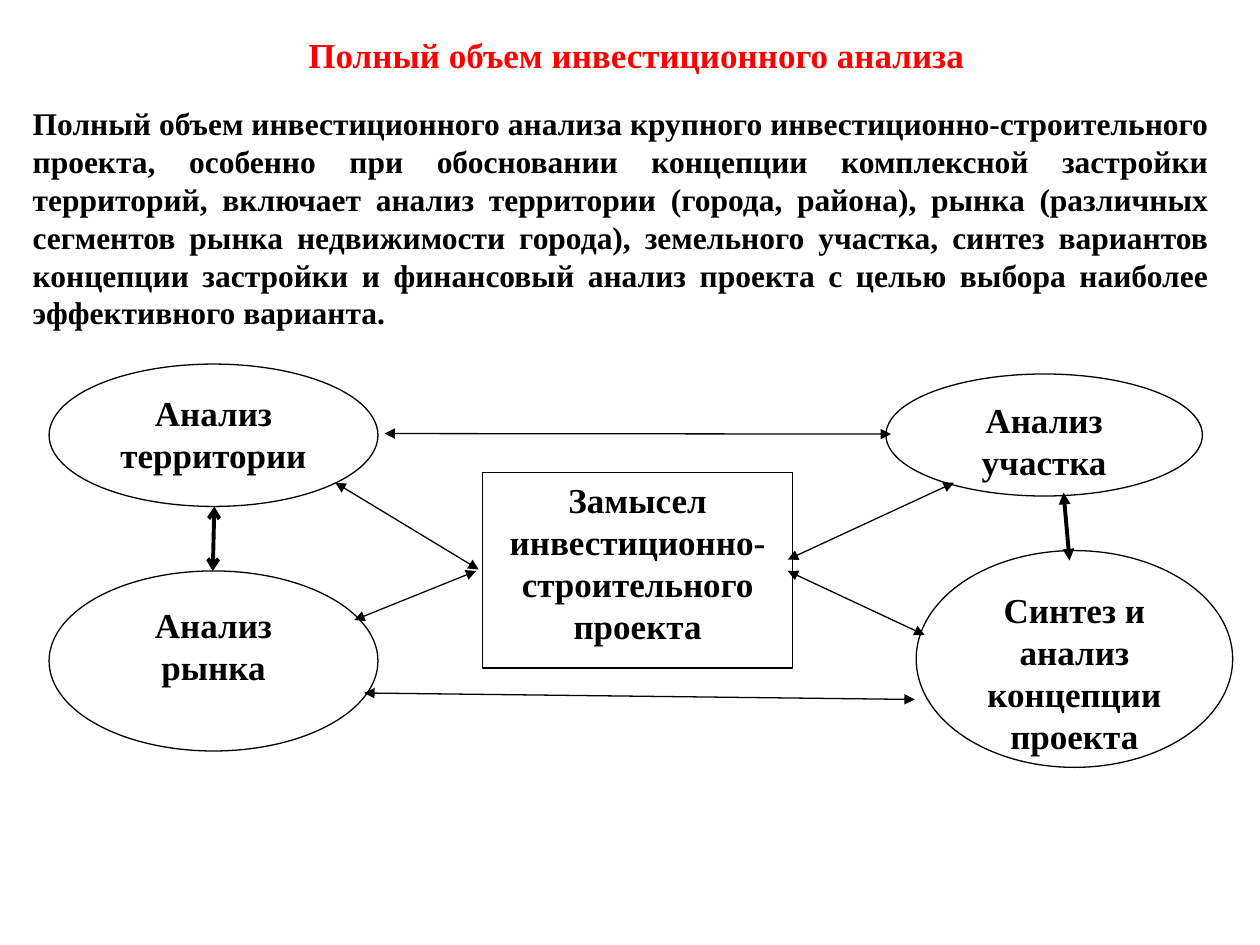
import pptx
import pptx.util
import pptx.dml.color
import pptx.enum.shapes
import pptx.enum.text
import pptx.oxml.ns
from lxml import etree

Cm, Pt = pptx.util.Cm, pptx.util.Pt
RGB = pptx.dml.color.RGBColor
KIND = pptx.enum.shapes.MSO_SHAPE
ALIGN = pptx.enum.text.PP_ALIGN
ANCHOR = pptx.enum.text.MSO_ANCHOR

RED = RGB(0xFF, 0x00, 0x00)
BLACK = RGB(0x00, 0x00, 0x00)
WHITE = RGB(0xFF, 0xFF, 0xFF)
FONT = "Times New Roman"
THIN, THICK = 0.75, 2.25

# Content, lengths in centimetres
TITLE = "Полный объем инвестиционного анализа"
BODY = (
    "Полный объем инвестиционного анализа крупного инвестиционно-строительного "
    "проекта, особенно при обосновании концепции комплексной застройки "
    "территорий, включает анализ территории (города, района), рынка (различных "
    "сегментов рынка недвижимости города), земельного участка, синтез вариантов "
    "концепции застройки и финансовый анализ проекта с целью выбора наиболее "
    "эффективного варианта."
)
NODES = [  # text, kind, left, top, width, height
    ("Замысел инвестиционно-строительного проекта", KIND.RECTANGLE,
     9.73, 9.53, 6.25, 3.94),
    ("Анализ территории", KIND.OVAL, 0.99, 7.34, 6.63, 2.87),
    ("Анализ рынка", KIND.OVAL, 0.99, 11.51, 6.63, 3.63),
    ("Анализ участка", KIND.OVAL, 17.86, 7.54, 6.38, 2.46),
    ("Синтез и анализ концепции проекта", KIND.OVAL, 18.47, 11.1, 6.38, 4.37),
]
LINKS = [  # from x, y, to x, y, width, arrowhead
    (6.76, 9.73, 9.65, 11.48, THIN, "triangle"),
    (7.14, 12.5, 9.6, 11.51, THIN, "triangle"),
    (7.75, 8.74, 17.96, 8.75, THIN, "triangle"),
    (15.88, 11.28, 19.23, 9.73, THIN, "triangle"),
    (15.88, 11.51, 18.64, 12.8, THIN, "triangle"),
    (21.44, 9.93, 21.56, 11.3, THICK, "triangle"),
    (7.34, 13.97, 18.44, 14.1, THIN, "triangle"),
    (4.32, 10.21, 4.29, 11.51, THICK, "arrow"),
]


def write(shape, text, size, color, align, anchor=ANCHOR.TOP):
    frame = shape.text_frame
    frame.text = text
    frame.word_wrap = True
    frame.vertical_anchor = anchor
    para = frame.paragraphs[0]
    para.alignment = align
    font = para.runs[0].font
    font.name, font.size, font.bold = FONT, Pt(size), True
    font.color.rgb = color


def add_node(shapes, text, kind, *box):
    node = shapes.add_shape(kind, *map(Cm, box))
    node.shadow.inherit = False
    node.fill.solid()
    node.fill.fore_color.rgb = WHITE
    node.line.color.rgb = BLACK
    node.line.width = Pt(THIN)
    write(node, text, 20, BLACK, ALIGN.CENTER)


def add_link(shapes, x1, y1, x2, y2, width, head):
    kind = pptx.enum.shapes.MSO_CONNECTOR.STRAIGHT
    link = shapes.add_connector(kind, Cm(x1), Cm(y1), Cm(x2), Cm(y2))
    link.line.color.rgb = BLACK
    link.line.width = Pt(width)
    qn = pptx.oxml.ns.qn
    props = link.line._get_or_add_ln()
    for end in ("a:headEnd", "a:tailEnd"):
        etree.SubElement(props, qn(end), type=head)
    etree.SubElement(link._element.spPr, qn("a:effectLst"))


def main():
    deck = pptx.Presentation()
    deck.slide_width, deck.slide_height = Cm(25.4), Cm(19.05)
    shapes = deck.slides.add_slide(deck.slide_layouts[5]).shapes

    # Title and body text
    title = shapes.title
    title.left, title.top = Cm(1.4), Cm(0.58)
    title.width, title.height = Cm(22.86), Cm(1.02)
    write(title, TITLE, 20, RED, ALIGN.CENTER, ANCHOR.MIDDLE)
    body = shapes.add_textbox(Cm(0.41), Cm(1.98), Cm(24.21), Cm(4.88))
    write(body, BODY, 18, BLACK, ALIGN.JUSTIFY)

    # Diagram
    for node in NODES:
        add_node(shapes, *node)
    for link in LINKS:
        add_link(shapes, *link)

    deck.save("out.pptx")


if __name__ == "__main__":
    main()
